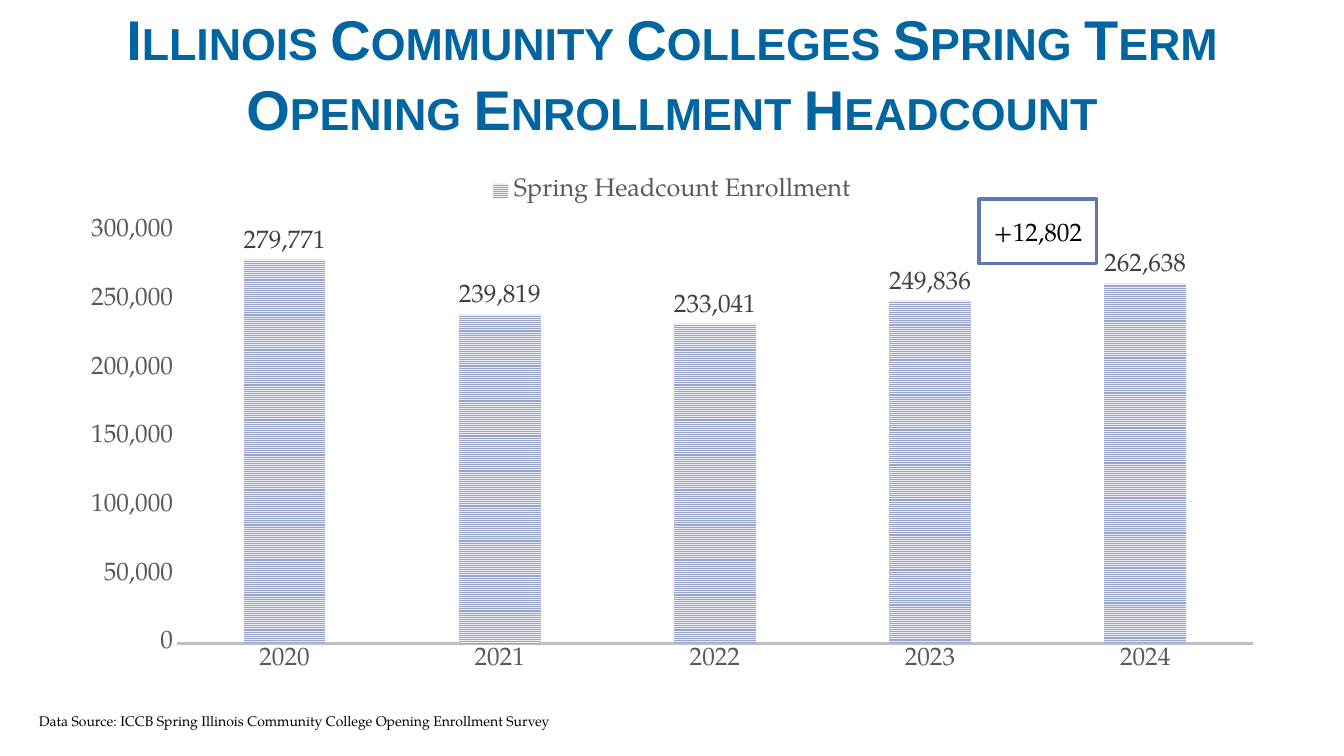
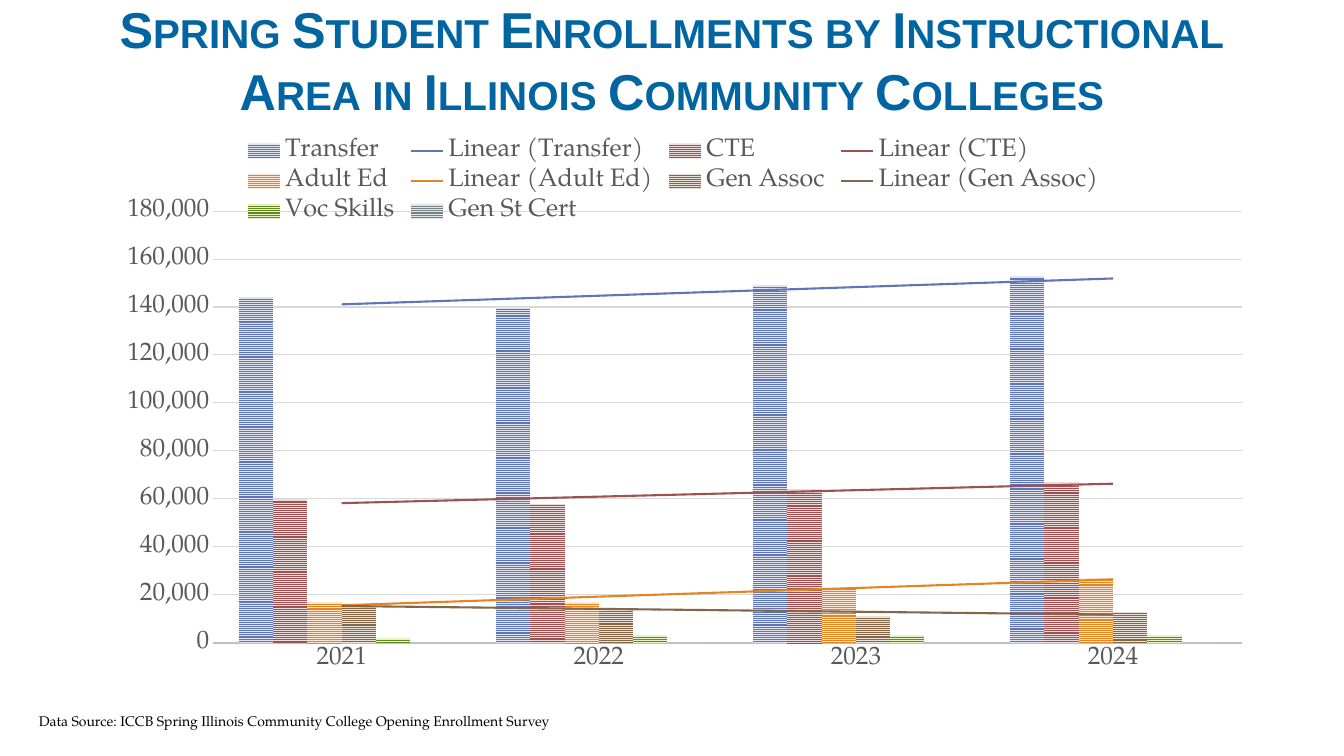
from lxml import etree
from pptx import Presentation
from pptx import util as u
from pptx.chart.data import CategoryChartData
from pptx.dml.color import RGBColor
from pptx.enum import chart as ch, dml, shapes, text
from pptx.oxml import parse_xml
from pptx.oxml.ns import nsdecls, qn

# Shared look
PX = 914400 / 100.8
SANS, SERIF = "Arial", "TeX Gyre Pagella"
COLORS = {
    "title": "0065A0", "black": "000000", "white": "FFFFFF", "axis text": "595959",
    "label": "404040", "axis": "BFBFBF", "grid": "D9D9D9", "accent": "6076B4",
}
SOURCE = "Data Source: ICCB Spring Illinois Community College Opening Enrollment Survey"

# Content: series are (name, values, stripe colour, ground colour, has trend line)
SLIDES = [
    {
        "title": "Illinois Community Colleges Spring Term Opening Enrollment Headcount",
        "title size": 40, "title box": (68, 64, 1208, 83),
        "chart box": (67, 166, 1210, 517),
        "years": ["2020", "2021", "2022", "2023", "2024"],
        "series": [("Spring Headcount Enrollment",
                    [279771, 239819, 233041, 249836, 262638], "9AA4C9", "EBEDF4", False)],
        "gap": 164, "overlap": -22, "top": 300000, "step": 50000,
        "grid": False, "labels": True, "plot": None,
        "callout": ("+12,802", (979, 199, 118, 65)),
    },
    {
        "title": "Spring Student Enrollments by Instructional Area in Illinois Community Colleges",
        "title size": 36, "title box": (68, 42, 1208, 84),
        "chart box": (68, 126, 1210, 608),
        "years": ["2021", "2022", "2023", "2024"],
        "series": [
            ("Transfer", [144000, 140000, 149000, 153000], "6076B4", "DFE4F0", True),
            ("CTE", [60000, 58000, 64000, 67000], "9C5252", "ECDBDB", True),
            ("Adult Ed", [17000, 17000, 23000, 27000], "E68422", "FAE6D3", True),
            ("Gen Assoc", [16000, 14000, 11000, 13000], "846648", "E9E0D7", True),
            ("Voc Skills", [2000, 3000, 3000, 3000], "63891F", "E3F2C7", False),
            ("Gen St Cert", [0, 0, 0, 0], "758085", "E3E6E7", False),
        ],
        "gap": 150, "overlap": 0, "top": 180000, "step": 20000,
        "grid": True, "labels": False,
        "plot": {"x": 0.12, "y": 0.14, "w": 0.85, "h": 0.71},
        "callout": None,
    },
]


def rgb(value):
    return RGBColor.from_string(COLORS.get(value, value))


def place(box):
    return [u.Emu(round(v * PX)) for v in box]


def set_font(font, size, color, name=SERIF):
    font.size, font.name = u.Pt(size), name
    font.color.rgb = rgb(color)


def set_line(line, color, width):
    line.color.rgb = rgb(color)
    line.width = u.Pt(width)


def write(sp, words, size, color, name=SERIF, align=text.PP_ALIGN.LEFT,
          anchor=text.MSO_ANCHOR.TOP):
    tf = sp.text_frame
    tf.word_wrap, tf.vertical_anchor = True, anchor
    p = tf.paragraphs[0]
    p.alignment = align
    r = p.add_run()
    r.text = words
    set_font(r.font, size, color, name)
    return p, r


def add_title(s, words, size, box):
    p, r = write(s.shapes.add_textbox(*place(box)), words, size, "title", SANS,
                 text.PP_ALIGN.CENTER, text.MSO_ANCHOR.BOTTOM)
    p.line_spacing = 1.04
    r.font.bold = True
    r.font._element.set("cap", "small")


def add_trend(series, color):
    trend = parse_xml(
        f'<c:trendline {nsdecls("c", "a")}><c:spPr><a:ln w="19050"><a:solidFill>'
        f'<a:srgbClr val="{color}"/></a:solidFill></a:ln></c:spPr>'
        '<c:trendlineType val="linear"/><c:dispRSqr val="0"/><c:dispEq val="0"/>'
        '</c:trendline>')
    series._element.find(qn("c:cat")).addprevious(trend)


def set_plot_area(chart, fractions):
    area = chart._chartSpace.find(".//" + qn("c:plotArea"))
    for old in area.findall(qn("c:layout")):
        area.remove(old)
    layout = etree.Element(qn("c:layout"))
    manual = etree.SubElement(layout, qn("c:manualLayout"))
    values = {"layoutTarget": "inner", "xMode": "edge", "yMode": "edge", **fractions}
    for tag, value in values.items():
        etree.SubElement(manual, qn("c:" + tag)).set("val", str(value))
    area.insert(0, layout)


def add_chart(s, d):
    data = CategoryChartData(number_format="#,##0")
    data.categories = d["years"]
    for name, values, *_ in d["series"]:
        data.add_series(name, values)
    chart = s.shapes.add_chart(ch.XL_CHART_TYPE.COLUMN_CLUSTERED,
                               *place(d["chart box"]), data).chart
    set_font(chart.font, 18, "black")
    chart.has_title = False
    chart.has_legend = True
    chart.legend.position = ch.XL_LEGEND_POSITION.TOP
    chart.legend.include_in_layout = False
    set_font(chart.legend.font, 18, "axis text")

    # Axes
    years, counts = chart.category_axis, chart.value_axis
    for axis in (years, counts):
        axis.major_tick_mark = axis.minor_tick_mark = ch.XL_TICK_MARK.NONE
        set_font(axis.tick_labels.font, 18, "axis text")
    set_line(years.format.line, "axis", 1.5)
    counts.format.line.fill.background()
    counts.minimum_scale, counts.maximum_scale = 0, d["top"]
    counts.major_unit = d["step"]
    counts.tick_labels.number_format = "#,##0"
    counts.tick_labels.number_format_is_linked = False
    counts.has_major_gridlines = d["grid"]
    if d["grid"]:
        set_line(counts.major_gridlines.format.line, "grid", 0.75)

    # Columns
    plot = chart.plots[0]
    plot.gap_width, plot.overlap = d["gap"], d["overlap"]
    plot.vary_by_categories = False
    for series, (_, _, stripe, ground, has_trend) in zip(plot.series, d["series"]):
        fill = series.format.fill
        fill.patterned()
        fill.pattern = dml.MSO_PATTERN.NARROW_HORIZONTAL
        fill.fore_color.rgb, fill.back_color.rgb = rgb(stripe), rgb(ground)
        series.format.line.fill.background()
        if d["labels"]:
            labels = series.data_labels
            labels.show_value = True
            labels.position = ch.XL_LABEL_POSITION.OUTSIDE_END
            set_font(labels.font, 18, "label")
        if has_trend:
            add_trend(series, stripe)
    if d["plot"]:
        set_plot_area(chart, d["plot"])


def add_callout(s, words, box):
    sp = s.shapes.add_shape(shapes.MSO_SHAPE.RECTANGLE, *place(box))
    sp.shadow.inherit = False
    sp.fill.solid()
    sp.fill.fore_color.rgb = rgb("white")
    set_line(sp.line, "accent", 2.25)
    write(sp, words, 18, "black", align=text.PP_ALIGN.CENTER,
          anchor=text.MSO_ANCHOR.MIDDLE)


def main():
    prs = Presentation()
    prs.slide_width, prs.slide_height = place((1344, 756))
    for d in SLIDES:
        s = prs.slides.add_slide(prs.slide_layouts[6])
        add_title(s, d["title"], d["title size"], d["title box"])
        add_chart(s, d)
        if d["callout"]:
            add_callout(s, *d["callout"])
        write(s.shapes.add_textbox(*place((29, 708, 714, 27))), SOURCE, 10, "black")
    prs.save("out.pptx")


if __name__ == "__main__":
    main()
